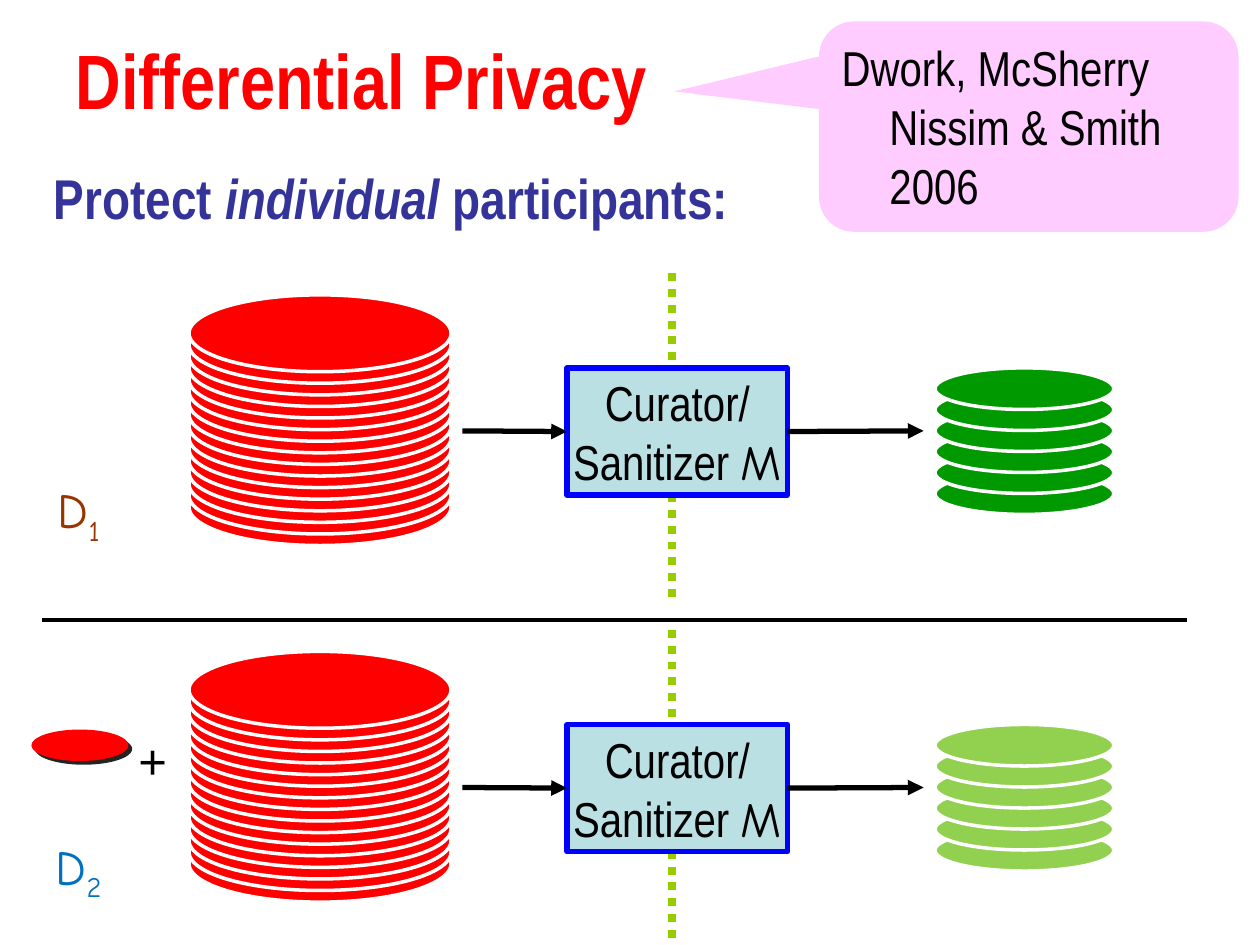
from dataclasses import dataclass

import pptx
import pptx.util
import pptx.dml.color
import pptx.enum.dml
import pptx.enum.shapes
import pptx.enum.text
import pptx.oxml
import pptx.oxml.ns
from pptx.util import Inches

SHAPE = pptx.enum.shapes.MSO_SHAPE
ALIGN = pptx.enum.text.PP_ALIGN
ANCHOR = pptx.enum.text.MSO_ANCHOR
FIT = pptx.enum.text.MSO_AUTO_SIZE
LEFT_SIDE, RIGHT_SIDE = 1, 3
DRAWING_NS = pptx.oxml.ns.nsdecls("a")


@dataclass(frozen=True)
class Theme:
    narrow: str = "Arial Narrow"
    sans: str = "Arial"
    script: str = "Comic Neue"
    title_size: int = 44
    heading_size: int = 32
    text_size: int = 28
    black: str = "000000"
    white: str = "FFFFFF"
    red: str = "FF0000"
    heading: str = "333399"
    box_fill: str = "BBE0E3"
    box_line: str = "0000FF"
    divider: str = "99CC00"
    callout: str = "FFCCFF"
    green: str = "009900"
    light_green: str = "92D050"
    brown: str = "993300"
    blue: str = "0070C0"


THEME = Theme()


def rgb(value):
    return pptx.dml.color.RGBColor.from_string(value)


def add_run(p, text, font=THEME.narrow, size=THEME.text_size, color=THEME.black,
            bold=False, italic=False):
    r = p.add_run()
    r.text = text
    r.font.name, r.font.size = font, pptx.util.Pt(size)
    r.font.bold, r.font.italic = bold, italic
    r.font.color.rgb = rgb(color)
    return r


def hang(p):
    """Give a paragraph the hanging indent used across the slide."""
    ppr = p._p.get_or_add_pPr()
    ppr.set("marL", str(Inches(0.38)))
    ppr.set("indent", str(Inches(-0.38)))


def add_effects(sp, content=""):
    """Set the effect list; an empty one removes the theme shadow."""
    sp._element.spPr.append(
        pptx.oxml.parse_xml(f"<a:effectLst {DRAWING_NS}>{content}</a:effectLst>"))


def add_solid(shapes, kind, left, top, width, height, fill, line=None, weight=2):
    sp = shapes.add_shape(kind, Inches(left), Inches(top), Inches(width), Inches(height))
    sp.shadow.inherit = False
    sp.fill.solid()
    sp.fill.fore_color.rgb = rgb(fill)
    if line:
        sp.line.color.rgb = rgb(line)
        sp.line.width = pptx.util.Pt(weight)
    else:
        sp.line.fill.background()
    return sp


def add_line(s, x1, y1, x2, y2, weight, color=THEME.black, dotted=False, arrow=False):
    c = s.shapes.add_connector(pptx.enum.shapes.MSO_CONNECTOR.STRAIGHT,
                               Inches(x1), Inches(y1), Inches(x2), Inches(y2))
    c.line.color.rgb = rgb(color)
    c.line.width = pptx.util.Pt(weight)
    if dotted:
        c.line.dash_style = pptx.enum.dml.MSO_LINE.ROUND_DOT
    if arrow:
        c.line._get_or_add_ln().append(
            pptx.oxml.parse_xml(f'<a:tailEnd {DRAWING_NS} type="triangle"/>'))
    add_effects(c)
    return c


def add_stack(s, left, top, width, height, count, step, fill):
    """Pile discs from the bottom up, so the top one shows whole."""
    group = s.shapes.add_group_shape()
    for i in reversed(range(count)):
        add_solid(group.shapes, SHAPE.OVAL, left, top + i * step, width, height,
                  fill, THEME.white)


def add_text(s, left, top, width, height):
    tb = s.shapes.add_textbox(Inches(left), Inches(top), Inches(width), Inches(height))
    tb.text_frame.word_wrap = True
    return tb.text_frame


def add_label(s, left, top, width, height, text, font, color, subscript=None):
    tf = add_text(s, left, top, width, height)
    tf.auto_size = FIT.SHAPE_TO_FIT_TEXT
    p = tf.paragraphs[0]
    p.alignment = ALIGN.CENTER
    add_run(p, text, font, color=color)
    if subscript:
        r = add_run(p, subscript, font, color=color)
        r.font._element.set("baseline", "-25000")


def add_curator(s, top):
    box = add_solid(s.shapes, SHAPE.RECTANGLE, 4.5, top, 1.75, 1.01,
                    THEME.box_fill, THEME.box_line, 3)
    tf = box.text_frame
    tf.word_wrap = False
    tf.vertical_anchor = ANCHOR.MIDDLE
    first, second = tf.paragraphs[0], tf.add_paragraph()
    add_run(first, "Curator/")
    add_run(second, "Sanitizer ")
    add_run(second, "M", THEME.script)
    for p in (first, second):
        p.alignment = ALIGN.CENTER
        hang(p)
    return box


def add_pipeline(s, top, output_color):
    """One row: data discs, curator on the dotted boundary, output discs."""
    middle = top + 1.25
    add_stack(s, 7.42, top + 0.75, 1.42, 0.33, 6, 1 / 6, output_color)
    add_line(s, 5.33, top, 5.33, top + 2.58, 4.5, THEME.divider, dotted=True)
    add_stack(s, 1.5, top + 0.17, 2.08, 0.61, 16, 0.092, THEME.red)
    box = add_curator(s, top + 0.75)
    into = add_line(s, 3.67, middle, 4.5, middle, 3, arrow=True)
    into.end_connect(box, LEFT_SIDE)
    out = add_line(s, 6.25, middle, 7.33, middle, 3, arrow=True)
    out.begin_connect(box, RIGHT_SIDE)


def add_headings(s):
    title = s.shapes.title
    title.left, title.top, title.width, title.height = map(Inches, (0.5, 0, 9, 1.25))
    tf = title.text_frame
    tf.auto_size = FIT.NONE
    tf.vertical_anchor = ANCHOR.MIDDLE
    p = tf.paragraphs[0]
    p.alignment = ALIGN.LEFT
    add_run(p, "Differential Privacy", size=THEME.title_size, color=THEME.red, bold=True)

    p = add_text(s, 0.33, 1.25, 9.42, 5.75).paragraphs[0]
    p.space_before = pptx.util.Pt(THEME.heading_size * 0.2)
    hang(p)
    for text, italic in (("Protect ", False), ("individual ", True), ("participants:", False)):
        add_run(p, text, size=THEME.heading_size, color=THEME.heading,
                bold=True, italic=italic)


def add_callout(s):
    sp = add_solid(s.shapes, SHAPE.ROUNDED_RECTANGULAR_CALLOUT, 6.5, 0.17, 3.33, 1.67,
                   THEME.callout)
    for i, value in enumerate((-0.845, -0.167, 0.167)):
        sp.adjustments[i] = value
    tf = sp.text_frame
    tf.word_wrap = True
    tf.vertical_anchor = ANCHOR.TOP
    p = tf.paragraphs[0]
    p.alignment = ALIGN.LEFT
    hang(p)
    add_run(p, "Dwork, McSherry Nissim & Smith 2006")


def add_extra_participant(s):
    disc = add_solid(s.shapes, SHAPE.OVAL, 0.25, 5.79, 0.77, 0.25, THEME.red)
    disc._element.spPr.remove(disc._element.spPr.find(pptx.oxml.ns.qn("a:effectLst")))
    add_effects(disc, f'<a:outerShdw dist="{pptx.util.Pt(3)}" dir="2700000">'
                      f'<a:srgbClr val="{THEME.black}"><a:alpha val="85000"/></a:srgbClr>'
                      '</a:outerShdw>')
    add_label(s, 1, 5.75, 0.42, 0.64, "+", THEME.sans, THEME.black)


def main():
    prs = pptx.Presentation()
    prs.slide_width, prs.slide_height = Inches(10), Inches(7.5)
    s = prs.slides.add_slide(prs.slide_layouts[5])
    add_headings(s)

    # Two data sets, one above the other
    rows = ((2.17, THEME.green, "1", THEME.brown), (5, THEME.light_green, "2", THEME.blue))
    for top, output_color, number, label_color in rows:
        add_pipeline(s, top, output_color)
        add_label(s, 0, top + 1.59, 1.25, 0.57, "D", THEME.script, label_color, number)
    add_line(s, 0.33, 4.92, 9.42, 4.92, 2.25)

    # The one added participant and the source of the idea
    add_extra_participant(s)
    add_callout(s)
    prs.save("out.pptx")


if __name__ == "__main__":
    main()
